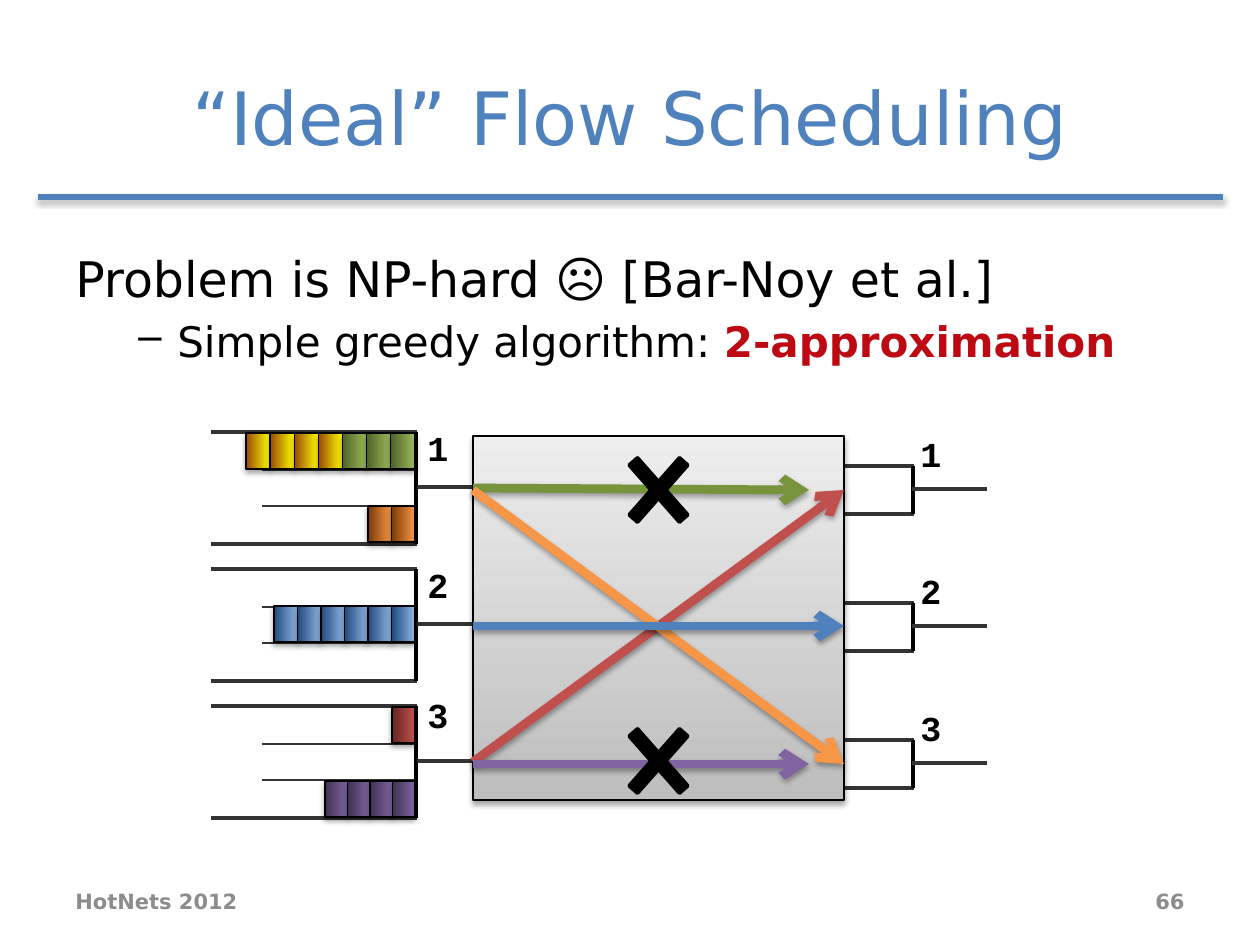
from lxml import etree
from pptx import Presentation
from pptx.dml.color import RGBColor
from pptx.enum.shapes import MSO_CONNECTOR, MSO_SHAPE
from pptx.enum.text import MSO_ANCHOR, PP_ALIGN
from pptx.oxml.ns import qn
from pptx.util import Pt

PX = 914400 / 126
LINE = MSO_CONNECTOR.STRAIGHT
RECT, CROSS = MSO_SHAPE.RECTANGLE, MSO_SHAPE.MATH_MULTIPLY
TOP, MIDDLE = MSO_ANCHOR.TOP, MSO_ANCHOR.MIDDLE
LEFT, CENTER, RIGHT = PP_ALIGN.LEFT, PP_ALIGN.CENTER, PP_ALIGN.RIGHT

SANS, MONO = "DejaVu Sans", "Courier New"
BLACK, DARK, GRAY, BLUE = "000000", "333333", "8C8C8C", "4F81BD"
STEP = 137
WALL = 416

# left edge, top, colour pair of each packet from left to right
YELLOW, GREEN = ("984807", "FFFF00"), ("4F6228", "9BBB59")
QUEUES = [
    (246, 433, [YELLOW] * 4 + [GREEN] * 3),
    (368, 506, [("7A3A05", "F79646")] * 2),
    (274, 606, [("1F497D", "8EB4E3")] * 6),
    (392, 707, [("632523", "C0504D")]),
    (325, 781, [("403152", "8064A2")] * 4),
]
FLOWS = [
    (473, 762, 844, 490, "C0504D"),
    (473, 488, 809, 490, "77933C"),
    (473, 490, 844, 764, "F79646"),
    (473, 764, 809, 764, "8064A2"),
    (473, 626, 844, 626, BLUE),
]


def px(n):
    return round(n * PX)


def rgb(code):
    return RGBColor.from_string(code)


def sub(parent, tag, **attrs):
    return etree.SubElement(parent, qn(tag), attrs)


def cast(effects):
    """Put a soft downward shadow into an effect list."""
    shade = sub(effects, "a:outerShdw", blurRad=str(Pt(3.1)), dist=str(Pt(1.8)),
                dir="5400000", algn="ctr", rotWithShape="0")
    sub(sub(shade, "a:srgbClr", val=BLACK), "a:alpha", val="35000")


def line(slide, x1, y1, x2, y2, color=DARK, width=2, shadow=False, arrow=False):
    link = slide.shapes.add_connector(LINE, px(x1), px(y1), px(x2), px(y2))
    link.line.color.rgb = rgb(color)
    link.line.width = Pt(width)
    if arrow:
        sub(link.line._get_or_add_ln(), "a:tailEnd", type="arrow")
    effects = sub(link._element.spPr, "a:effectLst")
    if shadow:
        cast(effects)


def shape(slide, kind, x, y, w, h, width=0.75):
    item = slide.shapes.add_shape(kind, px(x), px(y), px(w), px(h))
    item.shadow.inherit = False
    item.line.color.rgb = rgb(BLACK)
    item.line.width = Pt(width)
    return item


def shaded(slide, x, y, w, h, colors, angle=0):
    """Add a rectangle with a two-colour gradient and a shadow."""
    item = shape(slide, RECT, x, y, w, h)
    item.fill.gradient()
    item.fill.gradient_angle = angle
    for stop, color, place in zip(item.fill.gradient_stops, colors, (0, 1)):
        stop.color.rgb = rgb(color)
        stop.position = place
    cast(item._element.spPr.find(qn("a:effectLst")))


def write(para, text, color=BLACK, **form):
    run = para.add_run()
    run.text = text
    run.font.color.rgb = rgb(color)
    for name, value in form.items():
        setattr(run.font, name, value)


def box(slide, x, y, w, h, anchor=TOP, wrap=True):
    frame = slide.shapes.add_textbox(px(x), px(y), px(w), px(h)).text_frame
    frame.word_wrap = wrap
    frame.vertical_anchor = anchor
    return frame


def label(slide, place, text, color, size, align=LEFT, font=SANS, bold=False,
          **frame):
    para = box(slide, *place, **frame).paragraphs[0]
    para.alignment = align
    write(para, text, color, size=Pt(size), name=font, bold=bold)


def number(slide, x, y, text):
    label(slide, (x, y, 48, 55), text, BLACK, 20, font=MONO, bold=True, wrap=False)


def body(slide):
    frame = box(slide, 63, 242, 1134, 602)
    head = frame.paragraphs[0]
    head.space_before = Pt(6)
    form = {"size": Pt(28), "name": SANS}
    write(head, "Problem is NP-hard ", **form)
    write(head, "☹", bold=True, **form)
    write(head, " [Bar-Noy et al.]", **form)

    point = frame.add_paragraph()
    point.level = 1
    point.space_before = Pt(5)
    props = point._p.get_or_add_pPr()
    props.set("marL", str(px(102)))
    props.set("indent", str(px(-39)))
    sub(props, "a:buChar", char="–")
    form["size"] = Pt(24)
    write(point, "Simple greedy algorithm: ", **form)
    write(point, "2-approximation", "BD0A12", bold=True, **form)


def source(slide, y):
    """Draw an input port: three queues, a wall and a stub."""
    for edge in (0, 112):
        line(slide, 211, y + edge, 417, y + edge)
    for edge in (38, 74):
        line(slide, 262, y + edge, 415, y + edge, width=1.25)
    line(slide, WALL, y, WALL, y + 112, BLACK)
    line(slide, 417, y + 55, 491, y + 55)


def sink(slide, y):
    """Draw an output port: a small buffer and a stub."""
    for edge in (0, 48):
        line(slide, 819, y + edge, 914, y + edge)
    line(slide, 913, y, 913, y + 48, BLACK)
    line(slide, 912, y + 23, 987, y + 23)


def queue(slide, left, top, packets):
    size = (WALL - 1 - left) / len(packets)
    for i, colors in enumerate(packets):
        shaded(slide, left + i * size, top, size, 36, colors)


def cross(slide, x, y):
    mark = shape(slide, CROSS, x, y, 97, 110, width=2)
    mark.adjustments[0] = 0.116
    mark.fill.solid()
    mark.fill.fore_color.rgb = rgb(BLACK)


def main():
    deck = Presentation()
    deck.slide_width, deck.slide_height = px(1260), px(945)
    slide = deck.slides.add_slide(deck.slide_layouts[6])

    line(slide, 1223, 197, 38, 197, BLUE, 3, shadow=True)
    label(slide, (63, 38, 1134, 157), "“Ideal” Flow Scheduling", BLUE, 42,
          CENTER, anchor=MIDDLE)
    body(slide)

    for i in range(3):
        source(slide, 432 + i * STEP)
        sink(slide, 466 + i * STEP)
    shaded(slide, 473, 436, 371, 364, ("BDBDBD", "EEEEEE"), 90)
    for i, y in enumerate((420, 557, 687)):
        number(slide, 415, y, str(i + 1))
        number(slide, 908, 426 + i * STEP, str(i + 1))

    for item in QUEUES:
        queue(slide, *item)
    for *ends, color in FLOWS:
        line(slide, *ends, color, 5, shadow=True, arrow=True)
    for y in (435, 706):
        cross(slide, 610, y)

    for x, text, align in ((63, "HotNets 2012", LEFT), (903, "66", RIGHT)):
        label(slide, (x, 876, 294, 50), text, GRAY, 12, align, bold=True,
              anchor=MIDDLE)
    deck.save("out.pptx")


if __name__ == "__main__":
    main()
